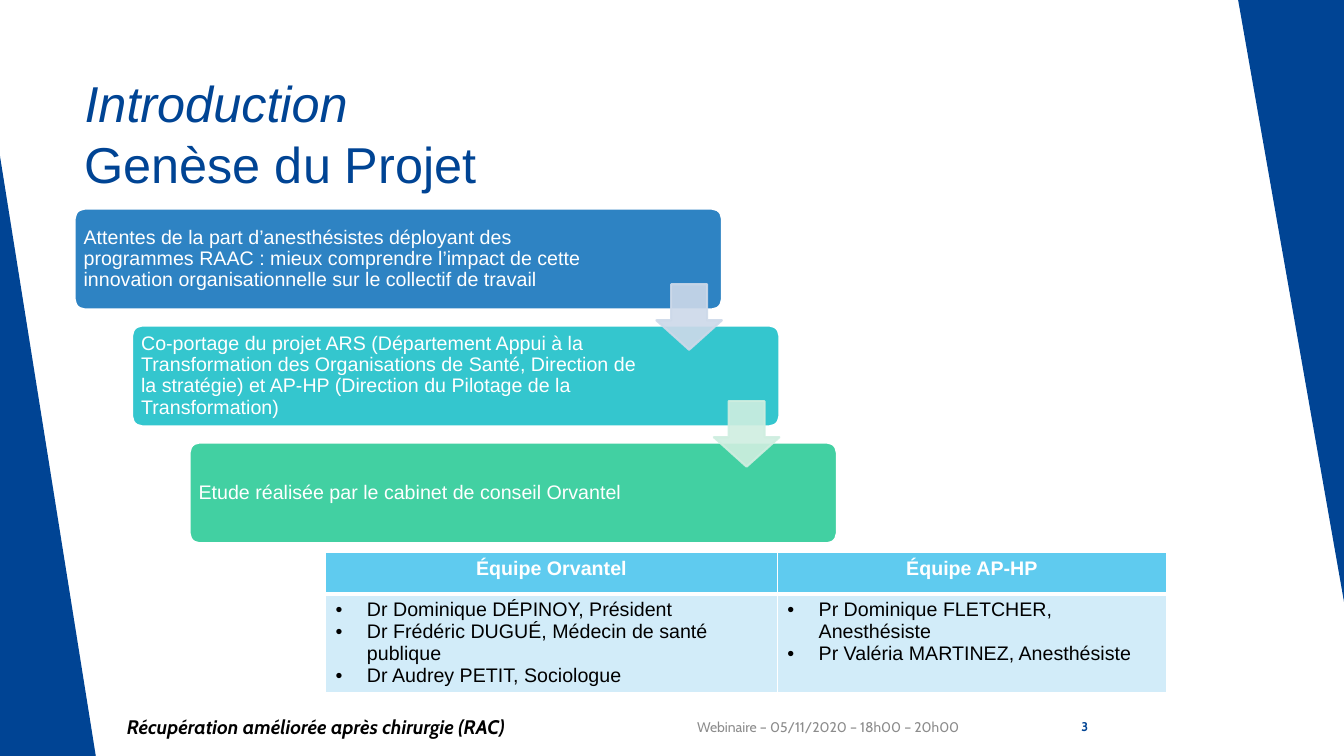
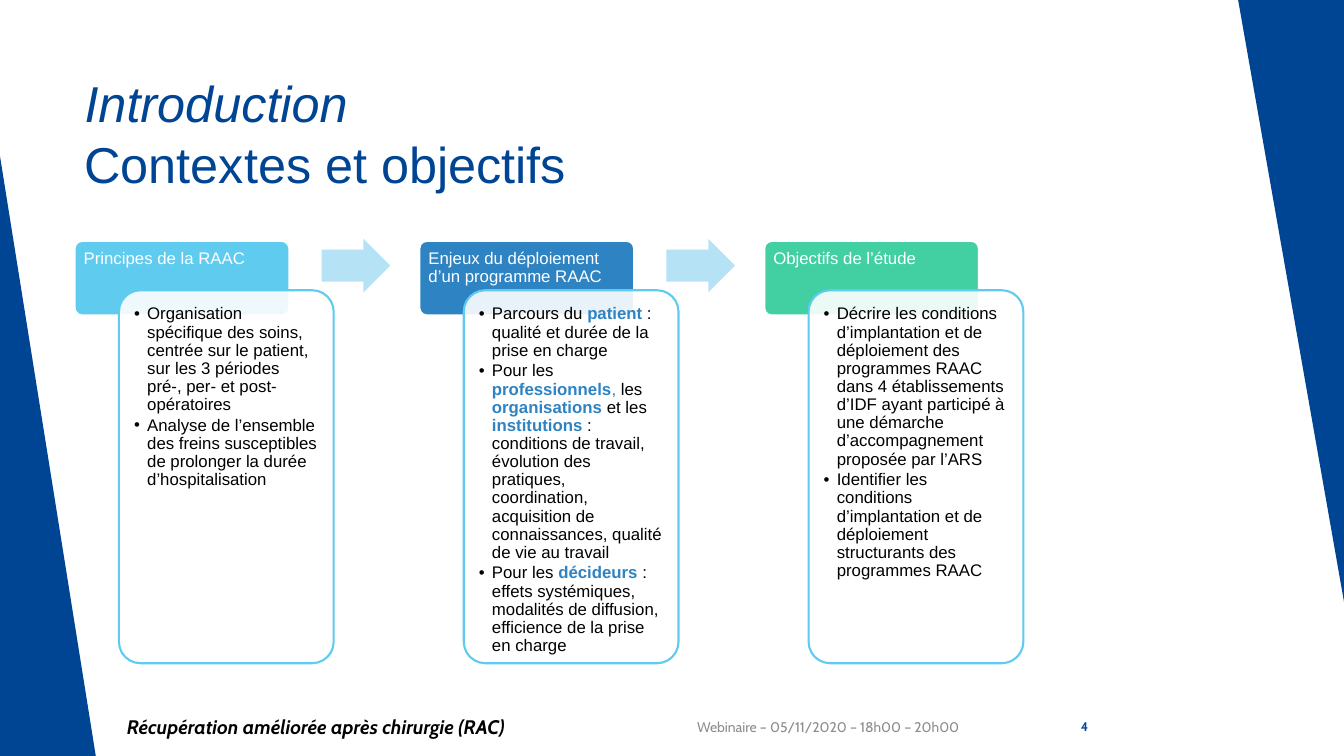
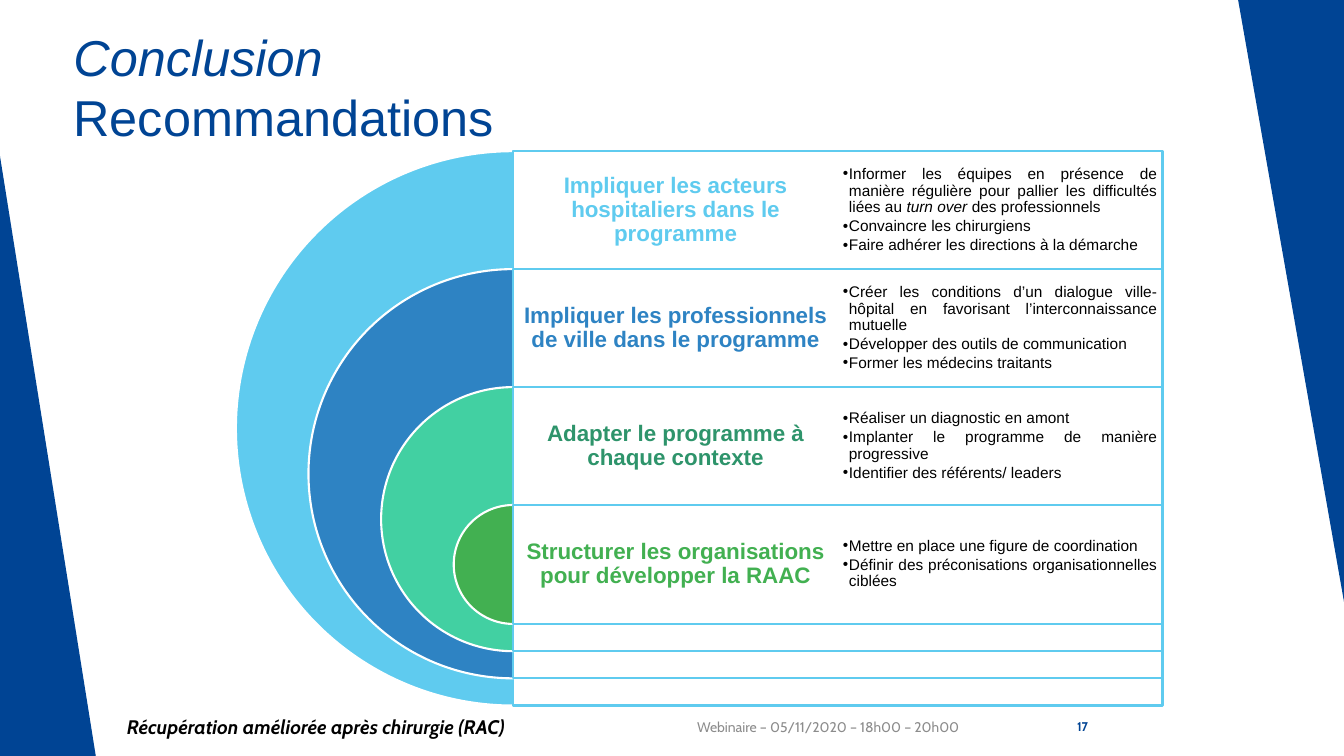
import pptx
import pptx.util
import pptx.dml.color
import pptx.enum.shapes
import pptx.enum.text
import pptx.oxml.ns
import lxml.etree

Inches = pptx.util.Inches
KIND = pptx.enum.shapes.MSO_SHAPE
ALIGN = pptx.enum.text.PP_ALIGN
ANCHOR = pptx.enum.text.MSO_ANCHOR

HUES = {
    "navy": "004494", "black": "000000", "white": "FFFFFF", "gray": "8C8C8C",
    "sky": "5FCBEF", "blue": "2E83C3", "teal": "34C6CE", "mint": "42D0A2",
    "leaf": "42B051", "pine": "2E946B", "pale": "D2ECF9", "ice": "B6E2F6",
    "mist": "CDD9E9", "foam": "CFEEE0",
}
KEY = {"hue": "blue", "bold": True}
PAD = (0.1, 0.05, 0.1, 0.05)


def color(name):
    return pptx.dml.color.RGBColor.from_string(HUES[name])


def child(node, tag, **attrs):
    return lxml.etree.SubElement(node, pptx.oxml.ns.qn(tag), attrs)


def fade(node, alpha):
    for fill in node.iter(pptx.oxml.ns.qn("a:srgbClr")):
        child(fill, "a:alpha", val=str(alpha * 1000))


def style(run, hue="black", size=12, font="Arial", bold=False, italic=False):
    run.font.name = font
    run.font.size = pptx.util.Pt(size)
    run.font.bold = bold
    run.font.italic = italic
    run.font.color.rgb = color(hue)


def write(frame, paras, align=ALIGN.LEFT, space=1, after=0, indent=0, **look):
    """Each paragraph is a string or a list of strings and (string, format)."""
    for i, parts in enumerate(paras):
        para = frame.paragraphs[0] if i == 0 else frame.add_paragraph()
        para.alignment = align
        para.line_spacing = space
        para.space_after = pptx.util.Pt(after)
        if indent:
            props = para._p.get_or_add_pPr()
            props.set("marL", str(Inches(indent)))
            props.set("indent", str(-Inches(indent)))
            child(props, "a:buFont", typeface="Arial")
            child(props, "a:buChar", char="•")
        for part in [parts] if isinstance(parts, str) else parts:
            if part == "\n":
                para.add_line_break()
                continue
            words, extra = (part, {}) if isinstance(part, str) else part
            run = para.add_run()
            run.text = words
            style(run, **{**look, **extra})


def label(slide, box, paras, pad=PAD, anchor=ANCHOR.MIDDLE, **look):
    frame = slide.shapes.add_textbox(*map(Inches, box)).text_frame
    frame.word_wrap = True
    frame.vertical_anchor = anchor
    (frame.margin_left, frame.margin_top,
     frame.margin_right, frame.margin_bottom) = map(Inches, pad)
    write(frame, paras, **look)


def draw(slide, kind, box, fill, line=None, adjust=(), alpha=100):
    shape = slide.shapes.add_shape(kind, *map(Inches, box))
    shape.shadow.inherit = False
    shape.fill.solid()
    shape.fill.fore_color.rgb = color(fill)
    if line:
        shape.line.color.rgb = color(line)
        shape.line.width = pptx.util.Pt(1.5)
    else:
        shape.line.fill.background()
    for i, value in enumerate(adjust):
        shape.adjustments[i] = value
    if alpha < 100:
        # White panels keep an opaque outline
        part = shape._element.spPr
        if fill == "white":
            part = part.find(pptx.oxml.ns.qn("a:solidFill"))
        fade(part, alpha)
    return shape


def base(deck, part, topic, number, left=0.74, top=0.67):
    """Blank slide with side bands, title and footer."""
    slide = deck.slides.add_slide(deck.slide_layouts[6])
    draw(slide, KIND.RIGHT_TRIANGLE, (0, 1.55, 0.95, 5.95), "navy")
    band = draw(slide, KIND.RIGHT_TRIANGLE, (12.28, 0, 1.05, 5.97), "navy")
    band.rotation = 180
    label(slide, (left, top, 9.4, 1.44),
          [[(part, {"italic": True}), "\n", topic]],
          anchor=ANCHOR.TOP, size=36, hue="navy")
    label(slide, (6.72, 7.01, 2.89, 0.4),
          ["Webinaire – 05/11/2020 – 18h00 – 20h00"],
          align=ALIGN.RIGHT, font="Cabin", size=10, hue="gray")
    label(slide, (1.16, 7.01, 5.35, 0.4),
          ["Récupération améliorée après chirurgie (RAC)"],
          font="Cabin", size=14, bold=True, italic=True)
    label(slide, (10.14, 7.01, 0.75, 0.4), [str(number)],
          align=ALIGN.RIGHT, font="Cabin", size=9, hue="navy", bold=True)
    return slide


def stairs(slide, left, top, steps, arrows):
    """Blocks going down to the right, joined by arrows."""
    spots = [(left + 0.57 * i, top + 1.16 * i) for i in range(len(steps))]
    for (x, y), (fill, width, words) in zip(spots, steps):
        draw(slide, KIND.ROUNDED_RECTANGLE, (x, y, 6.42, 1), fill, "white", [0.1])
        label(slide, (x + 0.03, y + 0.03, width, 0.94), [words],
              pad=[0.06] * 4, space=0.9, size=14, hue="white")
    for (x, y), fill in zip(spots, arrows):
        draw(slide, KIND.DOWN_ARROW, (x + 5.77, y + 0.75, 0.65, 0.65),
             fill, fill, [0.55, 0.45], alpha=90)


def edge(cell, **widths):
    props = cell._tc.get_or_add_tcPr()
    for side in "LRTB":
        line = child(props, "a:ln" + side, w=str(pptx.util.Pt(widths.get(side, 1))))
        child(child(line, "a:solidFill"), "a:srgbClr", val=HUES["white"])


def teams(slide, left, top, widths, heights, groups):
    """Table with one column for each team."""
    grid = slide.shapes.add_table(
        2, len(groups), *map(Inches, (left, top, sum(widths), sum(heights)))).table
    for row, height in zip(grid.rows, heights):
        row.height = Inches(height)
    for i, (name, people) in enumerate(groups):
        grid.columns[i].width = Inches(widths[i])
        head, body = grid.cell(0, i), grid.cell(1, i)
        edge(head, B=3)
        edge(body, T=3)
        for cell, fill in ((head, "sky"), (body, "pale")):
            cell.fill.solid()
            cell.fill.fore_color.rgb = color(fill)
        body.margin_bottom = 0
        write(head.text_frame, [name], align=ALIGN.CENTER, size=14,
              hue="white", bold=True)
        write(body.text_frame, people, indent=0.31, size=14)


def card(slide, left, top, fill, name, points):
    """Coloured heading with an overlapping panel of points."""
    draw(slide, KIND.ROUNDED_RECTANGLE, (left, top, 2.13, 0.74), fill, "white", [0.1])
    label(slide, (left, top, 2.13, 0.5), [name], pad=(0.09, 0.09, 0.09, 0.05),
          anchor=ANCHOR.TOP, space=0.9, hue="white")
    draw(slide, KIND.ROUNDED_RECTANGLE, (left + 0.44, top + 0.49, 2.13, 3.7),
         "white", "sky", [0.1], alpha=90)
    label(slide, (left + 0.5, top + 0.55, 2, 3.58), points, pad=[0.09] * 4,
          anchor=ANCHOR.TOP, space=0.9, after=1.8, indent=0.13)


def target(slide, left, top, rows):
    """Nested half discs, each opening on a row of advice."""
    for i, (fill, hue, name, points) in enumerate(rows):
        size = 5.5 - 1.44 * i
        y = top + 1.17 * i
        draw(slide, KIND.PIE, (left - size / 2, y, size, size), fill, "white", [54, 162])
        draw(slide, KIND.RECTANGLE, (left, y, 6.44, size), "white", "sky", alpha=90)
        label(slide, (left, y, 3.22, 1.17), [name], pad=[0.07] * 4,
              align=ALIGN.CENTER, space=0.9, size=16, hue=hue, bold=True)
        label(slide, (left + 3.22, y, 3.22, 1.17), points, pad=[0.05] * 4,
              align=ALIGN.JUSTIFY, space=0.9, after=1.65, indent=0.06, size=11)


def genesis(deck):
    slide = base(deck, "Introduction", "Genèse du Projet", 3)
    stairs(slide, 0.74, 2.07, [
        ("blue", 5.34, "Attentes de la part d’anesthésistes déployant des programmes RAAC : "
         "mieux comprendre l’impact de cette innovation organisationnelle sur le "
         "collectif de travail"),
        ("teal", 5.14, "Co-portage du projet ARS (Département Appui à la Transformation des "
         "Organisations de Santé, Direction de la stratégie) et AP-HP (Direction du "
         "Pilotage de la Transformation)"),
        ("mint", 5.14, "Etude réalisée par le cabinet de conseil Orvantel"),
    ], ["mist", "foam"])
    teams(slide, 3.23, 5.48, (4.48, 3.86), (0.41, 0.96), [
        ("Équipe Orvantel", [
            "Dr Dominique DÉPINOY, Président",
            "Dr Frédéric DUGUÉ, Médecin de santé publique",
            "Dr Audrey PETIT, Sociologue"]),
        ("Équipe AP-HP", [
            "Pr Dominique FLETCHER, Anesthésiste",
            "Pr Valéria MARTINEZ, Anesthésiste"]),
    ])


def aims(deck):
    slide = base(deck, "Introduction", "Contextes et objectifs", 4)
    cards = [
        ("sky", "Principes de la RAAC", [
            "Organisation spécifique des soins, centrée sur le patient, sur les 3 "
            "périodes pré-, per- et post-opératoires",
            "Analyse de l’ensemble des freins susceptibles de prolonger la durée "
            "d’hospitalisation"]),
        ("blue", "Enjeux du déploiement d’un programme RAAC", [
            ["Parcours du ", ("patient ", KEY), ": qualité et durée de la prise en charge"],
            ["Pour les ", ("professionnels", KEY), (",", {"hue": "blue"}), " les ",
             ("organisations ", KEY), "et les ", ("institutions ", KEY),
             ": conditions de travail, évolution des pratiques, coordination, "
             "acquisition de connaissances, qualité de vie au travail"],
            ["Pour les ", ("décideurs", KEY), " : effets systémiques, modalités de "
             "diffusion, efficience de la prise en charge"]]),
        ("mint", "Objectifs de l’étude", [
            "Décrire les conditions d’implantation et de déploiement des programmes "
            "RAAC dans 4 établissements d’IDF ayant participé à une démarche "
            "d’accompagnement proposée par l’ARS",
            "Identifier les conditions d’implantation et de déploiement structurants "
            "des programmes RAAC"]),
    ]
    for i, parts in enumerate(cards):
        left = 0.74 + 3.42 * i
        card(slide, left, 2.39, *parts)
        if i < len(cards) - 1:
            draw(slide, KIND.RIGHT_ARROW, (left + 2.45, 2.37, 0.68, 0.53),
                 "ice", adjust=[0.6, 0.5])


def advice(deck):
    slide = base(deck, "Conclusion", "Recommandations", 17, left=0.63, top=0.21)
    target(slide, 5.09, 1.5, [
        ("sky", "sky", "Impliquer les acteurs hospitaliers dans le programme", [
            ["Informer les équipes en présence de manière régulière pour pallier les "
             "difficultés liées au ", ("turn over ", {"italic": True}),
             "des professionnels"],
            "Convaincre les chirurgiens",
            "Faire adhérer les directions à la démarche"]),
        ("blue", "blue", "Impliquer les professionnels de ville dans le programme", [
            "Créer les conditions d’un dialogue ville-hôpital en favorisant "
            "l’interconnaissance mutuelle",
            "Développer des outils de communication",
            "Former les médecins traitants"]),
        ("mint", "pine", "Adapter le programme à chaque contexte", [
            "Réaliser un diagnostic en amont",
            "Implanter le programme de manière progressive",
            "Identifier des référents/ leaders"]),
        ("leaf", "leaf", "Structurer les organisations pour développer la RAAC", [
            "Mettre en place une figure de coordination",
            "Définir des préconisations organisationnelles ciblées"]),
    ])


def main():
    deck = pptx.Presentation()
    deck.slide_width = Inches(13.33)
    deck.slide_height = Inches(7.5)
    genesis(deck)
    aims(deck)
    advice(deck)
    deck.save("out.pptx")


if __name__ == "__main__":
    main()
